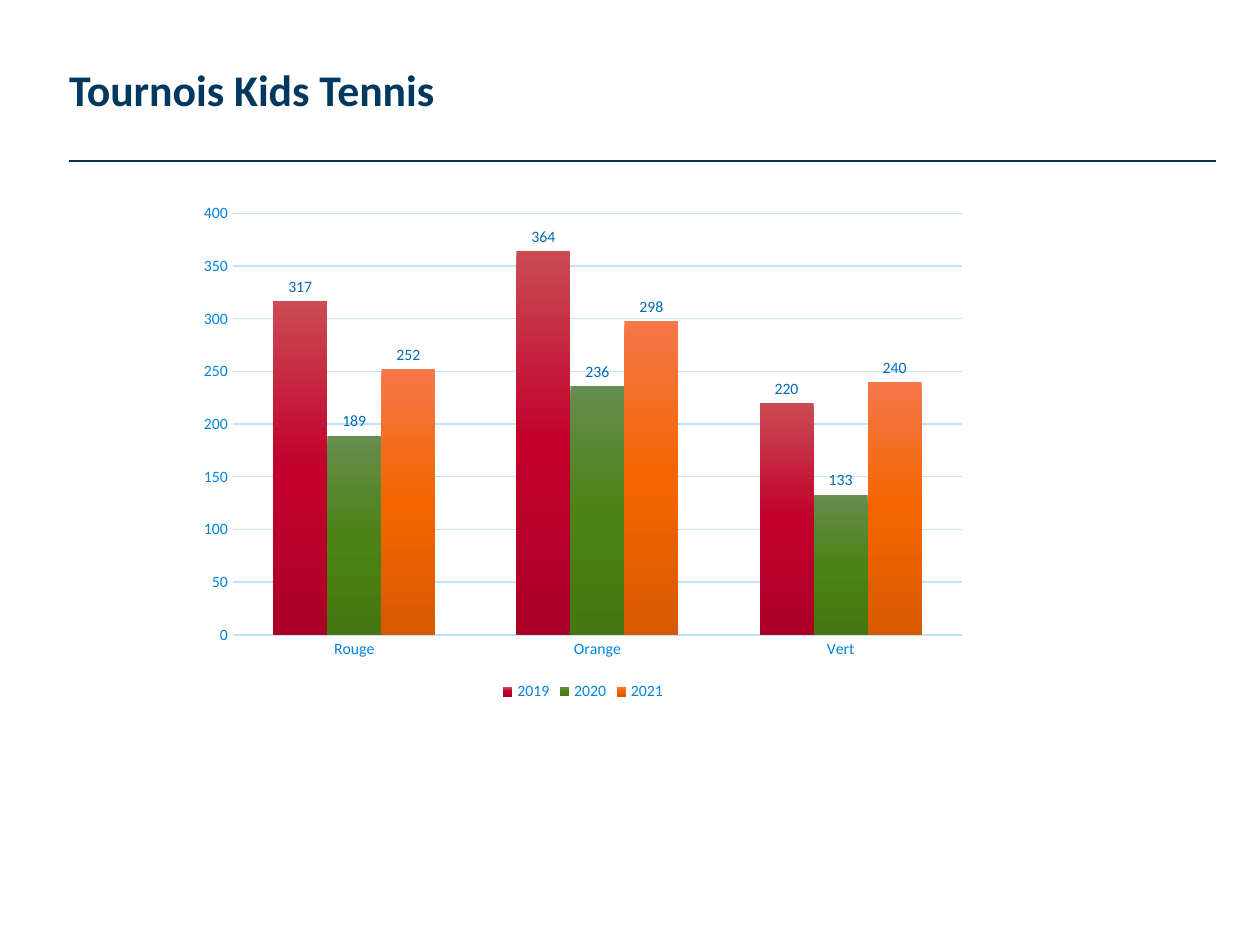
"""Build the slide that compares Kids Tennis tournaments by level and year."""
from dataclasses import dataclass

from lxml import etree
from pptx import Presentation
from pptx.chart.data import CategoryChartData
from pptx.dml.color import RGBColor
from pptx.enum.chart import XL_CHART_TYPE, XL_LABEL_POSITION, XL_LEGEND_POSITION, XL_TICK_MARK
from pptx.enum.shapes import MSO_CONNECTOR
from pptx.enum.text import MSO_ANCHOR, MSO_AUTO_SIZE, PP_ALIGN
from pptx.oxml.ns import qn
from pptx.util import Emu, Pt

COLUMNS = XL_CHART_TYPE.COLUMN_CLUSTERED
OUTSIDE_END = XL_LABEL_POSITION.OUTSIDE_END
BOTTOM = XL_LEGEND_POSITION.BOTTOM
NO_TICK = XL_TICK_MARK.NONE
STRAIGHT = MSO_CONNECTOR.STRAIGHT
TOP = MSO_ANCHOR.TOP
NO_FIT = MSO_AUTO_SIZE.NONE
LEFT = PP_ALIGN.LEFT
EMU_PER_PX = 914400 / 126
TITLE_ONLY = 5


@dataclass(frozen=True)
class Theme:
    font: str = "Calibri"
    title: str = "00385F"
    rule: str = "0E3350"
    chart: str = "002A48"
    axis: str = "0083E1"
    grid: str = "BDE4FF"
    label: str = "006AB6"
    title_size: float = 25
    title_leading: float = 32
    chart_size: float = 10
    small_size: float = 9


@dataclass(frozen=True)
class Box:
    left: int
    top: int
    width: int
    height: int


@dataclass(frozen=True)
class Season:
    year: str
    counts: tuple[int, ...]
    gradient: tuple[str, str, str]


THEME = Theme()
TITLE_BOX = Box(69, 59, 706, 57)
RULE_BOX = Box(69, 161, 1147, 0)
CHART_BOX = Box(188, 194, 790, 512)
LEVELS = ("Rouge", "Orange", "Vert")
SEASONS = (
    Season("2019", (317, 364, 220), ("CA4B54", "C2002B", "AC0027")),
    Season("2020", (189, 236, 133), ("668D4E", "4D8216", "45780F")),
    Season("2021", (252, 298, 240), ("F5784B", "F46500", "D95900")),
)


def px(length: int) -> Emu:
    return Emu(round(length * EMU_PER_PX))


def rgb(color: str) -> RGBColor:
    return RGBColor.from_string(color)


def style_font(font, size: float, color: str, bold: bool = False) -> None:
    font.name = THEME.font
    font.size = Pt(size)
    font.bold = bold
    font.color.rgb = rgb(color)


def style_line(line, color: str, width: float) -> None:
    line.color.rgb = rgb(color)
    line.width = Pt(width)


def add_title(slide, text: str, box: Box) -> None:
    title = slide.shapes.title
    title.left, title.top = px(box.left), px(box.top)
    title.width, title.height = px(box.width), px(box.height)
    frame = title.text_frame
    frame.text = text
    frame.margin_left = frame.margin_right = frame.margin_top = frame.margin_bottom = 0
    frame.vertical_anchor = TOP
    frame.auto_size = NO_FIT
    frame.word_wrap = True
    para = frame.paragraphs[0]
    para.alignment = LEFT
    para.line_spacing = Pt(THEME.title_leading)
    style_font(para.runs[0].font, THEME.title_size, THEME.title, bold=True)


def add_rule(slide, box: Box) -> None:
    rule = slide.shapes.add_connector(
        STRAIGHT, px(box.left), px(box.top), px(box.left + box.width), px(box.top + box.height)
    )
    style_line(rule.line, THEME.rule, 1.5)
    etree.SubElement(rule._element.spPr, qn("a:effectLst"))


def fill_gradient(series, colors: tuple[str, ...]) -> None:
    properties = series._element.get_or_add_spPr()
    gradient = etree.SubElement(properties, qn("a:gradFill"), rotWithShape="1")
    stops = etree.SubElement(gradient, qn("a:gsLst"))
    step = 100000 // (len(colors) - 1)
    for index, color in enumerate(colors):
        stop = etree.SubElement(stops, qn("a:gs"), pos=str(index * step))
        etree.SubElement(stop, qn("a:srgbClr"), val=color)
    etree.SubElement(gradient, qn("a:lin"), ang="5400000", scaled="0")


def style_series(series, season: Season) -> None:
    fill_gradient(series, season.gradient)
    series.invert_if_negative = False
    labels = series.data_labels
    labels.show_value = True
    labels.position = OUTSIDE_END
    style_font(labels.font, THEME.small_size, THEME.label)


def style_axes(chart) -> None:
    for axis in (chart.category_axis, chart.value_axis):
        axis.major_tick_mark = axis.minor_tick_mark = NO_TICK
        style_font(axis.tick_labels.font, THEME.small_size, THEME.axis)
    style_line(chart.category_axis.format.line, THEME.grid, 1)
    counts = chart.value_axis
    counts.minimum_scale, counts.maximum_scale, counts.major_unit = 0, 400, 50
    counts.format.line.fill.background()
    style_line(counts.major_gridlines.format.line, THEME.grid, 0.75)


def add_season_chart(slide, seasons: tuple[Season, ...], box: Box) -> None:
    data = CategoryChartData()
    data.categories = LEVELS
    for season in seasons:
        data.add_series(season.year, season.counts)
    chart = slide.shapes.add_chart(
        COLUMNS, px(box.left), px(box.top), px(box.width), px(box.height), data
    ).chart
    style_font(chart.font, THEME.chart_size, THEME.chart)
    chart.has_title = False
    chart.has_legend = True
    chart.legend.position = BOTTOM
    chart.legend.include_in_layout = False
    style_font(chart.legend.font, THEME.small_size, THEME.axis)
    style_axes(chart)
    plot = chart.plots[0]
    plot.gap_width, plot.overlap = 150, 0
    plot.vary_by_categories = False
    for series, season in zip(plot.series, seasons):
        style_series(series, season)


def main() -> None:
    deck = Presentation()
    deck.slide_width, deck.slide_height = px(1260), px(945)
    slide = deck.slides.add_slide(deck.slide_layouts[TITLE_ONLY])
    add_rule(slide, RULE_BOX)
    add_title(slide, "Tournois Kids Tennis", TITLE_BOX)
    add_season_chart(slide, SEASONS, CHART_BOX)
    deck.save("out.pptx")


if __name__ == "__main__":
    main()
